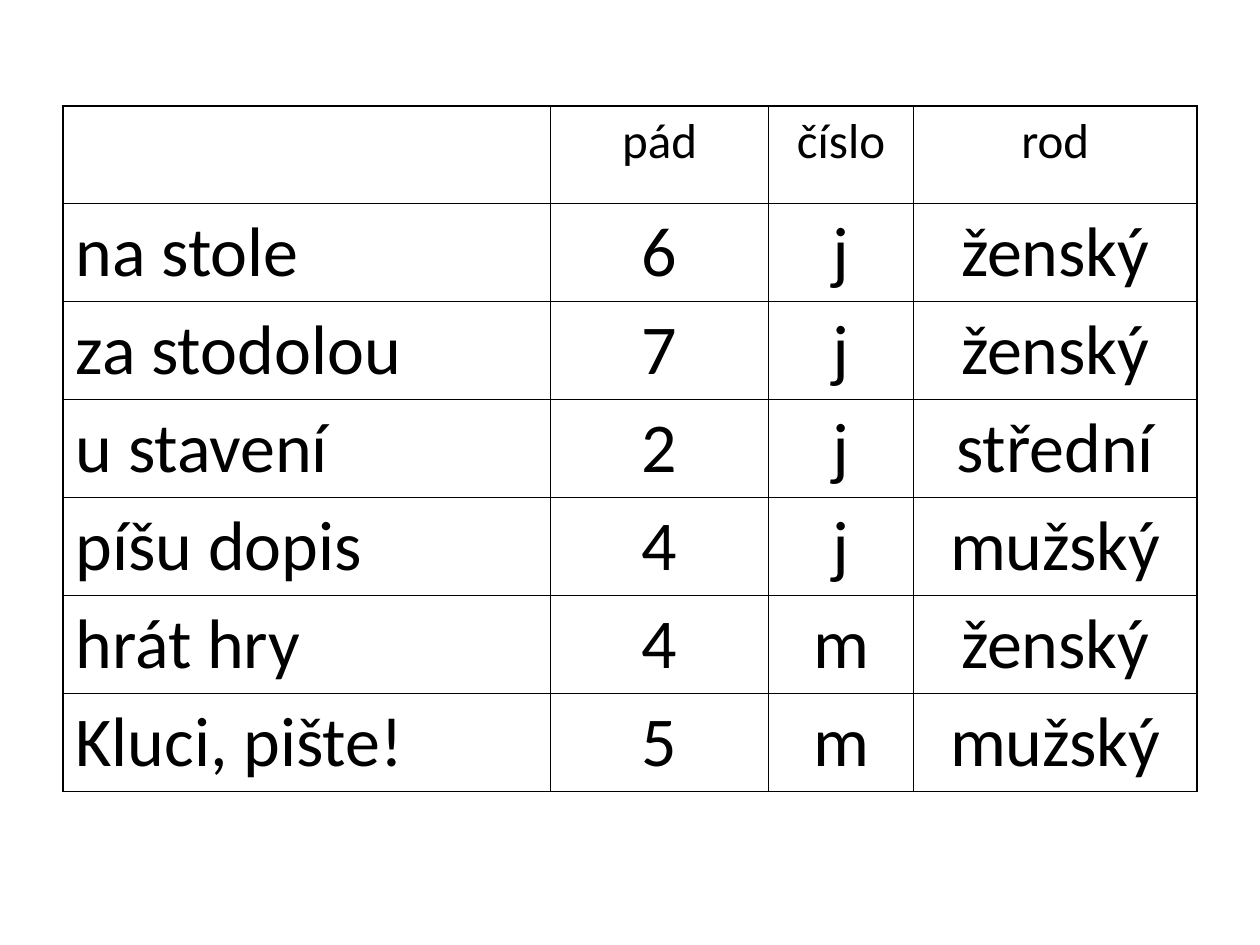
import pptx
import pptx.util
import pptx.dml.color
import pptx.enum.text
import pptx.oxml.ns
import lxml.etree

Inches = pptx.util.Inches
Pt = pptx.util.Pt
COLORS = {"ink": "000000"}
WIDTHS = [3.87, 1.73, 1.15, 2.25]
ROWS = [
    ["", "pád", "číslo", "rod"],
    ["na stole", "6", "j", "ženský"],
    ["za stodolou", "7", "j", "ženský"],
    ["u stavení", "2", "j", "střední"],
    ["píšu dopis", "4", "j", "mužský"],
    ["hrát hry", "4", "m", "ženský"],
    ["Kluci, pište!", "5", "m", "mužský"],
]


class Deck:
    font = "Calibri"
    head = 28
    body = 40
    line = 1

    def __init__(self, slide):
        self.slide = slide

    def text(self, cell, words, size, align):
        para = cell.text_frame.paragraphs[0]
        para.alignment = align
        run = para.add_run()
        run.text = words
        run.font.name = self.font
        run.font.size = Pt(size)
        run.font.color.rgb = pptx.dml.color.RGBColor.from_string(COLORS["ink"])

    def border(self, cell):
        qn = pptx.oxml.ns.qn
        props = cell._tc.get_or_add_tcPr()
        for side in ("lnL", "lnR", "lnT", "lnB"):
            edge = lxml.etree.SubElement(props, qn("a:" + side), w=str(Pt(self.line)))
            fill = lxml.etree.SubElement(edge, qn("a:solidFill"))
            lxml.etree.SubElement(fill, qn("a:srgbClr"), val=COLORS["ink"])

    def table(self, rows, widths, left, top, height):
        frame = self.slide.shapes.add_table(
            len(rows), len(widths), Inches(left), Inches(top),
            Inches(sum(widths)), Inches(height))
        grid = frame.table
        grid.first_row = False
        grid.horz_banding = False
        for col, width in zip(grid.columns, widths):
            col.width = Inches(width)
        aligns = pptx.enum.text.PP_ALIGN
        for r, row in enumerate(rows):
            for c, words in enumerate(row):
                cell = grid.cell(r, c)
                self.border(cell)
                cell.fill.background()
                if words:
                    self.text(cell, words, self.body if r else self.head,
                              aligns.CENTER if c else aligns.LEFT)


def main():
    show = pptx.Presentation()
    show.slide_width = Inches(10)
    show.slide_height = Inches(7.5)
    deck = Deck(show.slides.add_slide(show.slide_layouts[6]))

    # Grammar table: case, number and gender of each phrase
    deck.table(ROWS, WIDTHS, 0.5, 0.84, 5.44)

    show.save("out.pptx")


if __name__ == "__main__":
    main()
